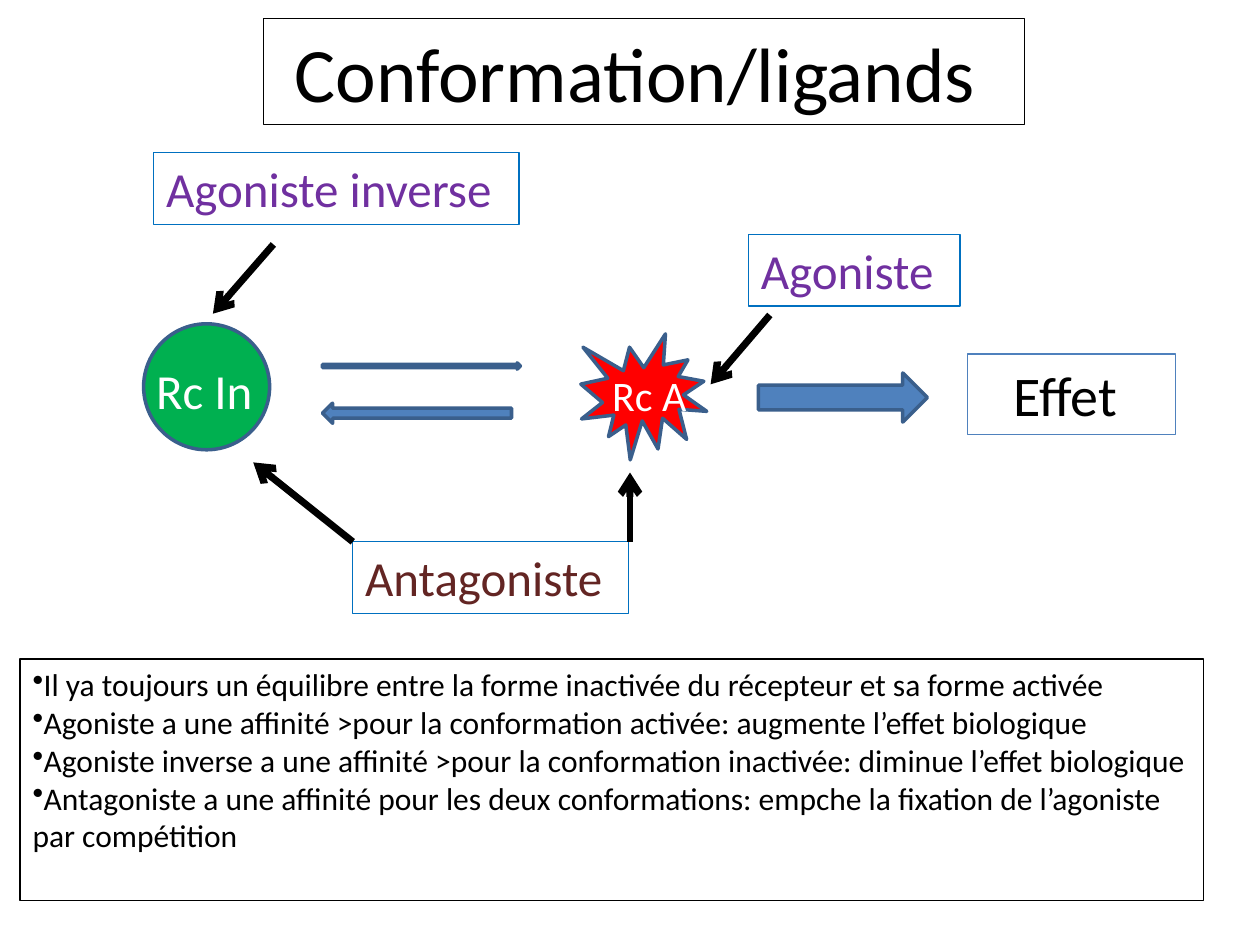
from dataclasses import dataclass

from lxml.etree import SubElement
from pptx import Presentation
from pptx.dml.color import RGBColor
from pptx.enum.shapes import MSO_CONNECTOR as Connector, MSO_SHAPE as Preset
from pptx.enum.text import MSO_ANCHOR as Anchor, PP_ALIGN as Align
from pptx.oxml.ns import qn
from pptx.util import Inches, Pt

# The slide is a grid of 100 columns by 75 rows
COLUMNS, ROWS = 100, 75
CELL = Inches(0.1)
BLACK, WHITE, BLUE, OUTLINE = "000000", "FFFFFF", "4F81BD", "3A5F8C"
LABEL_LINE, PURPLE, BROWN = "0070C0", "7030A0", "632523"


@dataclass(frozen=True)
class Area:
    col: float
    row: float
    cols: float
    rows: float

    def lengths(self) -> list[int]:
        return [cells(n) for n in (self.col, self.row, self.cols, self.rows)]


@dataclass(frozen=True)
class Figure:
    preset: Preset
    area: Area
    fill: str


@dataclass(frozen=True)
class Caption:
    area: Area
    lines: tuple[str, ...]
    size: float
    color: str
    line: str = ""
    align: Align = Align.LEFT
    wrap: bool = True
    bullets: int = 0


@dataclass(frozen=True)
class Pointer:
    start: tuple[float, float]
    end: tuple[float, float]


FIGURES = (
    Figure(Preset.OVAL, Area(11.4, 25.7, 10, 10), "00B050"),
    Figure(Preset.EXPLOSION1, Area(46.1, 26.5, 10, 10), "FF0000"),
    Figure(Preset.RIGHT_ARROW, Area(25.6, 28.8, 15.7, 0.5), BLUE),
    Figure(Preset.LEFT_ARROW, Area(25.6, 32, 15, 1.6), BLUE),
    Figure(Preset.RIGHT_ARROW, Area(60.2, 29.6, 13.4, 3.9), BLUE),
)

NOTES = (
    "Il ya toujours un équilibre entre la forme inactivée du récepteur et sa forme activée",
    "Agoniste a une affinité >pour la conformation activée: augmente l’effet biologique",
    "Agoniste inverse a une affinité >pour la conformation inactivée: diminue l’effet biologique",
    "Antagoniste a une affinité pour les deux conformations: empche la fixation de l’agoniste",
    "par compétition",
)

CAPTIONS = (
    Caption(Area(20.9, 1.5, 60.4, 8.4), ("Conformation/ligands ",), 44, BLACK, BLACK, Align.CENTER),
    Caption(Area(76.8, 28.1, 16.5, 6.4), ("Effet ",), 32, BLACK, BLUE, Align.CENTER),
    Caption(Area(11.4, 28.1, 9.8, 5.7), ("Rc In",), 28, WHITE, wrap=False),
    Caption(Area(47.6, 28.8, 8, 5), ("Rc A",), 24, WHITE, wrap=False),
    Caption(Area(59.4, 18.6, 16.8, 5.7), ("Agoniste",), 28, PURPLE, LABEL_LINE),
    Caption(Area(12.2, 12.1, 29, 5.7), ("Agoniste inverse",), 28, PURPLE, LABEL_LINE),
    Caption(Area(28, 43, 21.9, 5.7), ("Antagoniste",), 28, BROWN, LABEL_LINE),
    Caption(Area(1.6, 52.3, 93.9, 19.2), NOTES, 18, BLACK, BLACK, bullets=4),
)

POINTERS = (
    Pointer((21.7, 19.4), (16.9, 24.9)),
    Pointer((61.1, 25), (56.4, 30.5)),
    Pointer((50, 43), (50, 37.5)),
    Pointer((28, 43), (20.1, 36.7)),
)


def cells(count: float) -> int:
    return round(count * CELL)


def paint(target, color: str) -> None:
    """Give a fill or a font one solid colour."""
    if hasattr(target, "solid"):
        target.solid()
        target = target.fore_color
    else:
        target = target.color
    target.rgb = RGBColor.from_string(color)


def apply(target, formats: dict) -> None:
    for name, value in formats.items():
        setattr(target, name, value)


def draw_figure(shapes, figure: Figure) -> None:
    shape = shapes.add_shape(figure.preset, *figure.area.lengths())
    shape.shadow.inherit = False
    paint(shape.fill, figure.fill)
    paint(shape.line, OUTLINE)
    shape.line.width = Pt(2)


def draw_caption(shapes, caption: Caption) -> None:
    box = shapes.add_textbox(*caption.area.lengths())
    if caption.line:
        paint(box.line, caption.line)
        box.line.width = Pt(0.75)
    frame = box.text_frame
    apply(frame, {"word_wrap": caption.wrap, "vertical_anchor": Anchor.TOP})
    frame.text = "\n".join(caption.lines)
    for number, paragraph in enumerate(frame.paragraphs):
        paragraph.alignment = caption.align
        font = paragraph.runs[0].font
        apply(font, {"name": "Calibri", "size": Pt(caption.size)})
        paint(font, caption.color)
        if number < caption.bullets:
            SubElement(paragraph._p.get_or_add_pPr(), qn("a:buChar"), char="•")


def draw_pointer(shapes, pointer: Pointer) -> None:
    ends = [cells(n) for n in pointer.start + pointer.end]
    connector = shapes.add_connector(Connector.STRAIGHT, *ends)
    paint(connector.line, BLACK)
    connector.line.width = Pt(4)
    SubElement(connector.line._get_or_add_ln(), qn("a:tailEnd"), type="arrow")
    SubElement(connector._element.spPr, qn("a:effectLst"))


def main() -> None:
    deck = Presentation()
    apply(deck, {"slide_width": cells(COLUMNS), "slide_height": cells(ROWS)})
    shapes = deck.slides.add_slide(deck.slide_layouts[6]).shapes

    # Receptor forms and the arrows between them
    for figure in FIGURES:
        draw_figure(shapes, figure)
    # Title, ligand labels and notes
    for caption in CAPTIONS:
        draw_caption(shapes, caption)
    # Ligands acting on the receptor
    for pointer in POINTERS:
        draw_pointer(shapes, pointer)

    deck.save("out.pptx")


if __name__ == "__main__":
    main()
